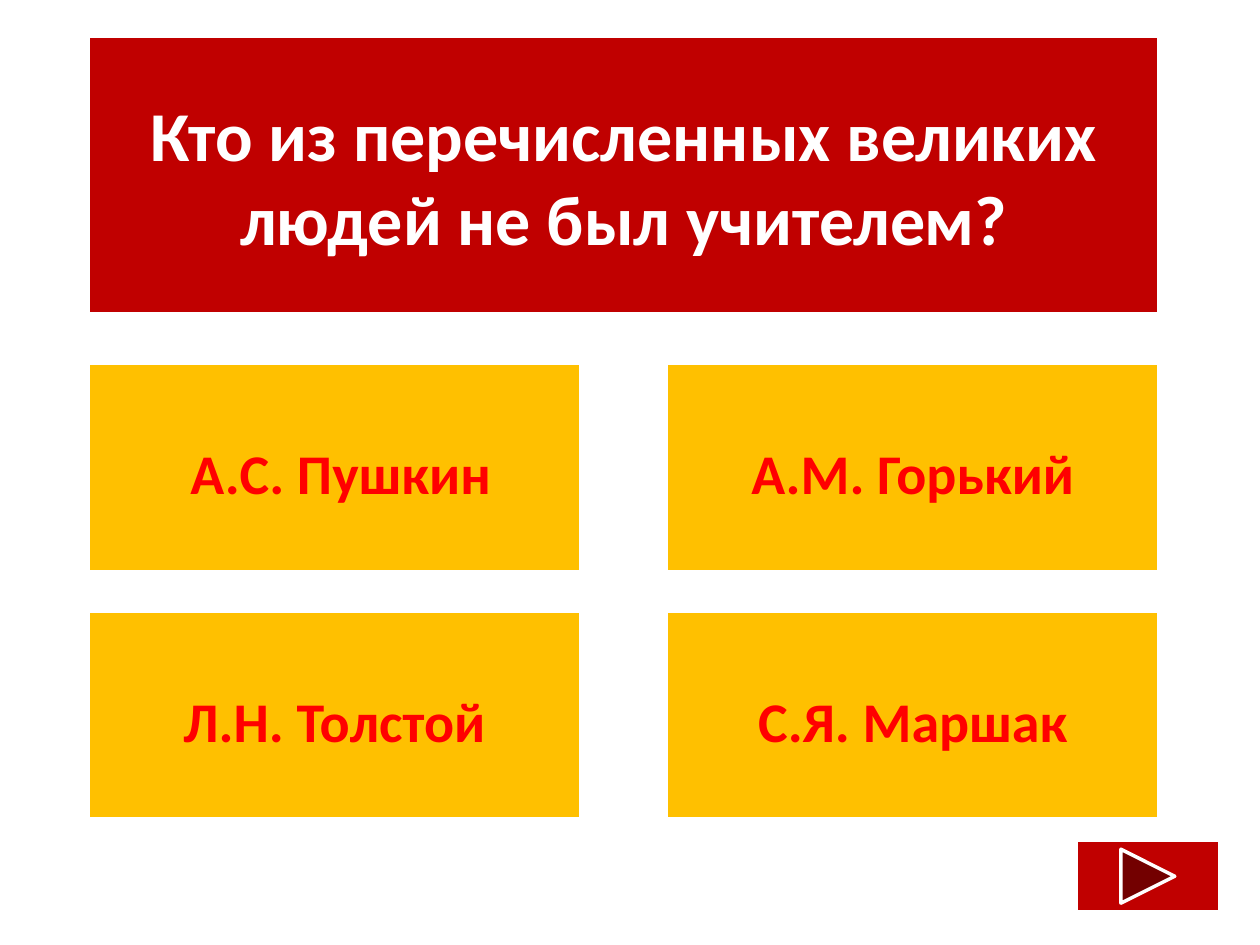
from pptx import Presentation
from pptx.dml.color import RGBColor
from pptx.enum.shapes import MSO_SHAPE
from pptx.enum.text import MSO_ANCHOR, PP_ALIGN
from pptx.util import Cm, Pt

RECT = MSO_SHAPE.RECTANGLE
NEXT = MSO_SHAPE.ACTION_BUTTON_FORWARD_OR_NEXT
MIDDLE = MSO_ANCHOR.MIDDLE
CENTER = PP_ALIGN.CENTER

WHITE = RGBColor(0xFF, 0xFF, 0xFF)
CRIMSON = RGBColor(0xC0, 0x00, 0x00)
GOLD = RGBColor(0xFF, 0xC0, 0x00)
RED = RGBColor(0xFF, 0x00, 0x00)

# Content
QUESTION = "Кто из перечисленных великих людей не был учителем?"
ANSWERS = [
    [" А.С. Пушкин", "А.М. Горький"],
    ["Л.Н. Толстой", "С.Я. Маршак"],
]

# Text formats
ASK_FONT = {"name": "Calibri", "size": Pt(40), "bold": True}
KEY_FONT = {"name": "Calibri", "size": Pt(32), "bold": True}
ASK_PARA = {"alignment": CENTER}
KEY_PARA = {"alignment": CENTER, "line_spacing": 1.15, "space_after": Pt(10)}

# Layout in centimetres
LEFT, WIDE = 1.78, 21.59
ASK_TOP, ASK_HIGH = 0.74, 5.59
KEY_TOP, KEY_WIDE, KEY_HIGH = 7.33, 9.93, 4.19
STEP_X, STEP_Y = WIDE - KEY_WIDE, 4.99


def add_box(slide, kind, spot, fill):
    box = slide.shapes.add_shape(kind, *[Cm(v) for v in spot])
    box.shadow.inherit = False
    box.fill.solid()
    box.fill.fore_color.rgb = fill
    box.line.color.rgb = WHITE
    box.line.width = Pt(2)
    return box


def put_text(box, text, color, font, para):
    frame = box.text_frame
    frame.word_wrap = True
    frame.vertical_anchor = MIDDLE
    line = frame.paragraphs[0]
    for name, value in para.items():
        setattr(line, name, value)
    run = line.add_run()
    run.text = text
    for name, value in font.items():
        setattr(run.font, name, value)
    run.font.color.rgb = color


def main():
    deck = Presentation()
    deck.slide_width, deck.slide_height = Cm(25.4), Cm(19.05)
    slide = deck.slides.add_slide(deck.slide_layouts[6])

    # Question
    box = add_box(slide, RECT, (LEFT, ASK_TOP, WIDE, ASK_HIGH), CRIMSON)
    put_text(box, QUESTION, WHITE, ASK_FONT, ASK_PARA)

    # Answer grid
    for row, names in enumerate(ANSWERS):
        for col, name in enumerate(names):
            spot = (LEFT + col * STEP_X, KEY_TOP + row * STEP_Y,
                    KEY_WIDE, KEY_HIGH)
            box = add_box(slide, RECT, spot, GOLD)
            put_text(box, name, RED, KEY_FONT, KEY_PARA)

    # Next button
    add_box(slide, NEXT, (21.69, 16.94, 2.9, 1.45), CRIMSON)

    deck.save("out.pptx")


if __name__ == "__main__":
    main()
